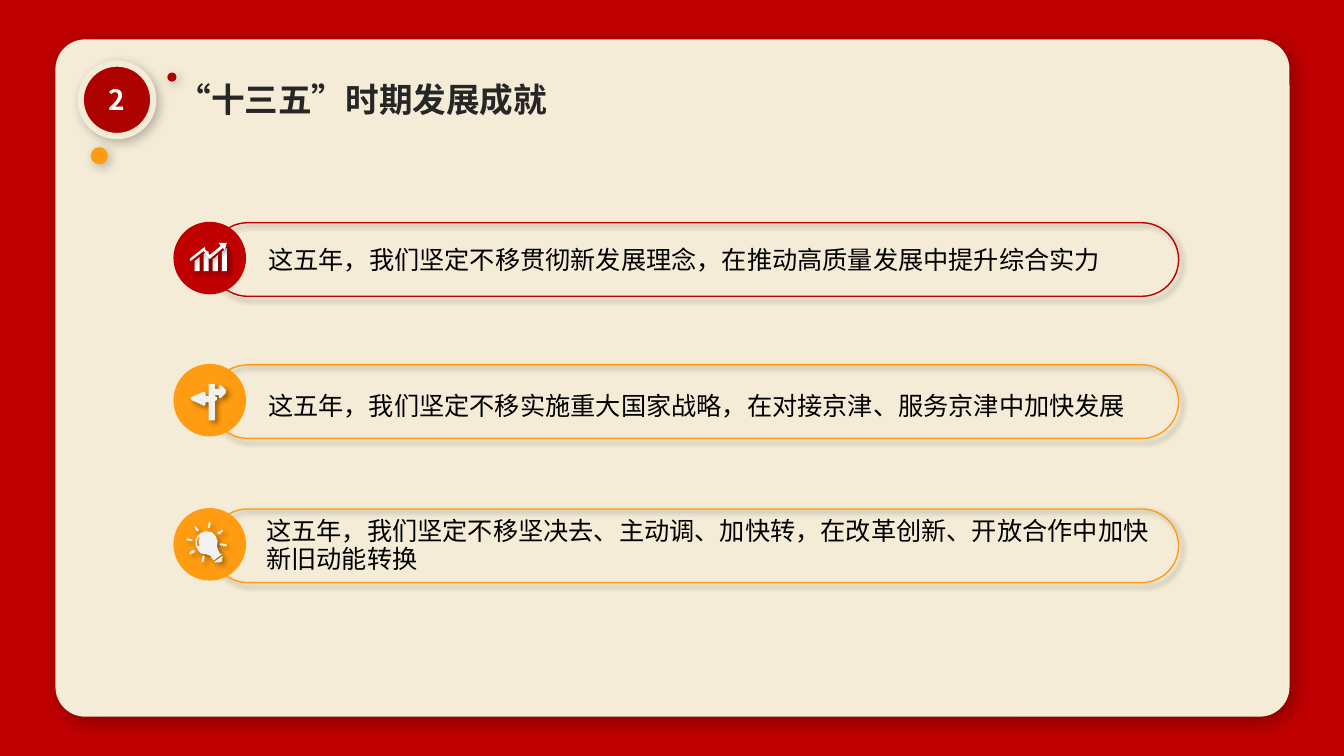
from dataclasses import dataclass

from lxml import etree
from pptx import Presentation
from pptx.dml.color import RGBColor
from pptx.enum.shapes import MSO_SHAPE
from pptx.enum.text import MSO_ANCHOR, MSO_AUTO_SIZE, PP_ALIGN
from pptx.oxml.ns import qn
from pptx.util import Inches, Pt

RECT, ROUND, OVAL = MSO_SHAPE.RECTANGLE, MSO_SHAPE.ROUNDED_RECTANGLE, MSO_SHAPE.OVAL
TOP, MIDDLE = MSO_ANCHOR.TOP, MSO_ANCHOR.MIDDLE
LEFT, CENTER = PP_ALIGN.LEFT, PP_ALIGN.CENTER
GROW, FIXED = MSO_AUTO_SIZE.SHAPE_TO_FIT_TEXT, MSO_AUTO_SIZE.NONE
FONT = "Noto Sans CJK SC"
RED, DARK, GOLD, CREAM = "C00000", "AE0201", "FF9C11", "F4ECD7"
WHITE, PALE, BLACK, GREY = "FFFFFF", "F2F2F2", "000000", "262626"

Points = list[tuple[float, float]]
Box = tuple[float, float, float, float]


@dataclass
class Shadow:
    alpha: int
    blur: float
    dist: float


@dataclass
class Icon:
    color: str
    loops: list[Points]


@dataclass
class Row:
    text: str
    color: str
    top: float
    box: Box
    icons: list[Icon]
    spacing: float | None = None


CARD = Shadow(30, 15, 5)
BADGE = Shadow(25, 8, 3)
SOFT = Shadow(40, 4, 3)

BARS = Icon(WHITE, [
    [(1.98, 2.55), (1.98, 2.69), (1.93, 2.69), (1.93, 2.59)],
    [(2.16, 2.53), (2.16, 2.69), (2.11, 2.69), (2.11, 2.56), (2.12, 2.57)],
    [(2.06, 2.49), (2.07, 2.5), (2.07, 2.69), (2.02, 2.69), (2.02, 2.52)],
    [(2.25, 2.46), (2.25, 2.69), (2.2, 2.69), (2.2, 2.5)],
])
TREND = Icon(WHITE, [[
    (2.25, 2.41), (2.23, 2.48), (2.21, 2.46), (2.08, 2.57), (2.07, 2.56),
    (2.02, 2.49), (1.89, 2.59), (1.88, 2.57), (2.03, 2.45), (2.04, 2.48),
    (2.08, 2.53), (2.19, 2.44), (2.17, 2.41),
]])
SIGN = Icon(PALE, [[
    (2.24, 3.87), (2.19, 3.82), (2.18, 3.82), (2.17, 3.83), (2.17, 3.86),
    (2.13, 3.86), (2.13, 3.81), (2.07, 3.81), (2.07, 3.93), (2.04, 3.93),
    (2.04, 3.9), (2.03, 3.89), (2.01, 3.89), (1.9, 3.94), (1.89, 3.95),
    (1.9, 3.97), (2.01, 4.02), (2.02, 4.03), (2.04, 4.01), (2.04, 3.99),
    (2.07, 3.99), (2.07, 4.17), (2.13, 4.17), (2.13, 3.98), (2.15, 3.97),
    (2.15, 3.94), (2.13, 3.93), (2.13, 3.92), (2.17, 3.92), (2.17, 3.94),
    (2.18, 3.95), (2.19, 3.95), (2.24, 3.9),
]])
BULB = Icon(PALE, [
    [(2.18, 5.49), (2.11, 5.54), (2.09, 5.54), (2.1, 5.52), (2.05, 5.5),
     (1.99, 5.49), (1.96, 5.45), (1.94, 5.41), (1.94, 5.36), (1.96, 5.32),
     (1.99, 5.29), (2.04, 5.27), (2.1, 5.28), (2.14, 5.32), (2.16, 5.37),
     (2.15, 5.42), (2.17, 5.47)],
    [(1.98, 5.33), (1.97, 5.33), (1.95, 5.37), (1.96, 5.42), (1.97, 5.42),
     (1.98, 5.41), (1.97, 5.37), (1.98, 5.34)],
    [(2.2, 5.5), (2.19, 5.51), (2.12, 5.56), (2.11, 5.56), (2.11, 5.54),
     (2.18, 5.49)],
    [(2.2, 5.52), (2.13, 5.57), (2.13, 5.58), (2.16, 5.58), (2.18, 5.58),
     (2.2, 5.57), (2.2, 5.54), (2.21, 5.53), (2.21, 5.52)],
    [(1.97, 5.27), (1.97, 5.25), (1.94, 5.22), (1.93, 5.22), (1.93, 5.23),
     (1.95, 5.27)],
    [(1.9, 5.37), (1.91, 5.36), (1.9, 5.35), (1.86, 5.34), (1.85, 5.35),
     (1.85, 5.36)],
    [(1.93, 5.46), (1.91, 5.46), (1.88, 5.48), (1.88, 5.5), (1.89, 5.5),
     (1.93, 5.48)],
    [(2.01, 5.52), (2, 5.57), (2.01, 5.58), (2.02, 5.57), (2.03, 5.53),
     (2.02, 5.51)],
    [(2.19, 5.39), (2.18, 5.4), (2.19, 5.41), (2.24, 5.42), (2.25, 5.41),
     (2.24, 5.4)],
    [(2.2, 5.26), (2.16, 5.28), (2.16, 5.3), (2.18, 5.3), (2.21, 5.27),
     (2.21, 5.26)],
    [(2.08, 5.24), (2.09, 5.19), (2.08, 5.18), (2.07, 5.19), (2.06, 5.23),
     (2.07, 5.24)],
])

ROWS = [
    Row("这五年，我们坚定不移贯彻新发展理念，在推动高质量发展中提升综合实力",
        RED, 2.2, (2.66, 2.42, 9.41, 0.3), [BARS, TREND]),
    Row("这五年，我们坚定不移实施重大国家战略，在对接京津、服务京津中加快发展",
        GOLD, 3.61, (2.66, 3.87, 9.03, 0.3), [SIGN]),
    Row("这五年，我们坚定不移坚决去、主动调、加快转，在改革创新、开放合作中加快新旧动能转换",
        GOLD, 5.04, (2.64, 5.15, 8.98, 0.54), [BULB], 0.9),
]


def paint(target, color: str) -> None:
    """Give a fill one solid colour."""
    target.solid()
    target.fore_color.rgb = RGBColor.from_string(color)


def style(shape, fill: str | None = None, line: str | None = None,
          width: float = 1, shadow: Shadow | None = None) -> None:
    if fill:
        paint(shape.fill, fill)
    else:
        shape.fill.background()
    if line:
        paint(shape.line.fill, line)
        shape.line.width = Pt(width)
    else:
        shape.line.fill.background()
    shape.shadow.inherit = False
    if shadow:
        effects = shape._element.spPr.find(qn("a:effectLst"))
        outer = etree.SubElement(
            effects, qn("a:outerShdw"), blurRad=str(Pt(shadow.blur)),
            dist=str(Pt(shadow.dist)), dir=str(45 * 60000), algn="tl", rotWithShape="0")
        tint = etree.SubElement(outer, qn("a:srgbClr"), val=BLACK)
        etree.SubElement(tint, qn("a:alpha"), val=str(shadow.alpha * 1000))


def add(shapes, kind, box: Box, adj: float | None = None, **look):
    shape = shapes.add_shape(kind, *map(Inches, box))
    if adj is not None:
        shape.adjustments[0] = adj
    style(shape, **look)
    return shape


def write(shape, text: str, *, size: float, color: str, bold: bool = False,
          align=LEFT, anchor=TOP, wrap: bool = True, fit=GROW,
          inset: Box | None = None, spacing: float | None = None) -> None:
    frame = shape.text_frame
    frame.word_wrap, frame.auto_size, frame.vertical_anchor = wrap, fit, anchor
    if inset is not None:
        (frame.margin_left, frame.margin_top,
         frame.margin_right, frame.margin_bottom) = map(Inches, inset)
    para = frame.paragraphs[0]
    para.alignment, para.line_spacing = align, spacing
    run = para.add_run()
    run.text = text
    font = run.font
    font.name, font.size, font.bold = FONT, Pt(size), bold
    paint(font.fill, color)
    etree.SubElement(run._r.get_or_add_rPr(), qn("a:ea"), typeface=FONT)


def trace(shapes, icon: Icon) -> None:
    """Draw all outlines of an icon as one freeform."""
    first, *rest = [[(Inches(x), Inches(y)) for x, y in loop] for loop in icon.loops]
    pen = shapes.build_freeform(*first[0])
    pen.add_line_segments(first[1:])
    for loop in rest:
        pen.move_to(*loop[0])
        pen.add_line_segments(loop[1:])
    style(pen.convert_to_shape(), fill=icon.color, shadow=SOFT)


def draw(shapes, row: Row) -> None:
    label = shapes.add_textbox(*map(Inches, row.box))
    write(label, row.text, size=18, color=BLACK, inset=(0, 0, 0, 0), spacing=row.spacing)
    add(shapes, ROUND, (2.09, row.top + 0.01, 9.6, 0.73), 0.5, line=row.color, shadow=SOFT)
    add(shapes, OVAL, (1.72, row.top, 0.72, 0.72), fill=row.color)
    for icon in row.icons:
        trace(shapes, icon)


def main() -> None:
    deck = Presentation()
    deck.slide_width, deck.slide_height = Inches(13.33), Inches(7.5)
    shapes = deck.slides.add_slide(deck.slide_layouts[5]).shapes
    title = shapes.title
    add(shapes, RECT, (0, 0, 13.33, 7.5), fill=RED)
    add(shapes, ROUND, (0.55, 0.39, 12.24, 6.72), 0.044, fill=CREAM, shadow=CARD)
    add(shapes, OVAL, (0.9, 1.46, 0.17, 0.17), fill=GOLD, shadow=BADGE)
    add(shapes, OVAL, (1.66, 0.72, 0.09, 0.09), fill=DARK, shadow=BADGE)
    badge = add(shapes, OVAL, (0.8, 0.63, 0.72, 0.72), fill=DARK,
                line=CREAM, width=4.5, shadow=BADGE)
    write(badge, "2", size=20, color=WHITE, bold=True, align=CENTER,
          anchor=MIDDLE, wrap=False, fit=FIXED)
    title.left, title.top, title.width, title.height = map(Inches, (1.66, 0.73, 5.5, 0.5))
    write(title, "“十三五”时期发展成就", size=24, color=GREY, bold=True)
    badge._element.addnext(title._element)
    for row in ROWS:
        draw(shapes, row)
    deck.save("out.pptx")


if __name__ == "__main__":
    main()
